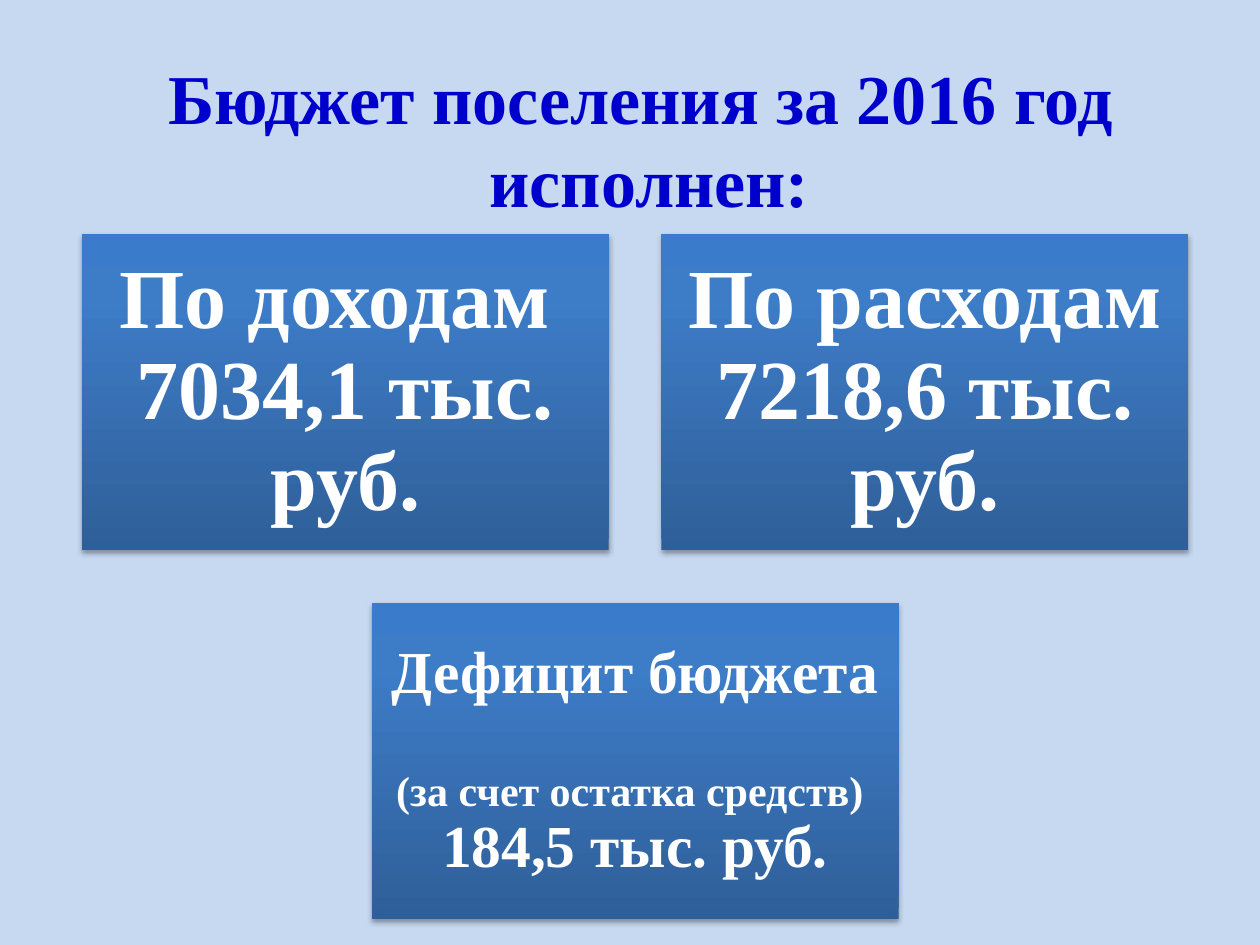
"""Build the slide on how the settlement budget was met in 2016."""
from copy import deepcopy
from typing import NamedTuple

from lxml.etree import fromstring
from pptx import Presentation
from pptx.dml.color import RGBColor
from pptx.enum.shapes import MSO_SHAPE
from pptx.enum.text import MSO_ANCHOR, PP_ALIGN
from pptx.oxml.ns import qn
from pptx.util import Pt

FONT = "Times New Roman"
WIDE, HIGH, GAP = 301.1, 180.7, 30.1
LEFT, TOP = 46.8, 133.8
STOPS = ((0, "2F5F99"), (0.8, "3D7CC7"), (1, "3A7CCB"))
SHADE = (
    '<a:effectLst xmlns:a="http://schemas.openxmlformats.org/drawingml/2006/main">'
    '<a:outerShdw blurRad="{}" dist="{}" dir="5400000" rotWithShape="0">'
    '<a:srgbClr val="{}"><a:alpha val="35000"/></a:srgbClr>'
    "</a:outerShdw></a:effectLst>"
)


class Piece(NamedTuple):
    text: str
    size: float
    ends: bool = False


class Card(NamedTuple):
    col: float
    row: int
    inset: float
    words: tuple[Piece, ...]


TITLE = (Piece("Бюджет поселения за 2016 год ", 40, True), Piece("исполнен:", 40))
CARDS = (
    Card(0, 0, 14.4, (Piece("По доходам ", 48, True), Piece("7034,1 тыс. руб.", 48))),
    Card(1, 0, 14.4, (Piece("По расходам 7218,6 тыс. руб.", 48),)),
    Card(0.5, 1, 10.2, (
        Piece("Дефицит бюджета ", 34, True),
        Piece("(за счет остатка средств) ", 24, True),
        Piece("184,5 тыс. руб.", 34),
    )),
)


def hue(code: str) -> RGBColor:
    return RGBColor.from_string(code)


def write(frame, words: tuple[Piece, ...], code: str) -> None:
    frame.word_wrap = True
    frame.vertical_anchor = MSO_ANCHOR.MIDDLE
    para = frame.paragraphs[0]
    para.alignment = PP_ALIGN.CENTER
    for piece in words:
        run = para.add_run()
        run.text = piece.text
        font = run.font
        font.name, font.size, font.bold = FONT, Pt(piece.size), True
        font.color.rgb = hue(code)
        if piece.ends:
            para.add_line_break()
            para._p[-1].append(deepcopy(run._r.rPr))


def shade(box) -> None:
    fill = box.fill
    fill.gradient()
    fill.gradient_angle = 90
    props = box._element.spPr
    stops = props.find(".//" + qn("a:gsLst"))
    stops.append(deepcopy(stops[-1]))
    for stop, (place, code) in zip(fill.gradient_stops, STOPS):
        stop.position = place
        stop.color.rgb = hue(code)
    box.line.fill.background()
    props.append(fromstring(SHADE.format(Pt(3.1), Pt(1.8), hue("000000"))))


def draw(slide, card: Card) -> None:
    left = LEFT + card.col * (WIDE + GAP)
    top = TOP + card.row * (HIGH + GAP)
    box = slide.shapes.add_shape(
        MSO_SHAPE.RECTANGLE, Pt(left), Pt(top), Pt(WIDE), Pt(HIGH))
    shade(box)
    frame = box.text_frame
    frame.margin_left = frame.margin_right = Pt(card.inset)
    frame.margin_top = frame.margin_bottom = Pt(card.inset)
    write(frame, card.words, "FFFFFF")
    frame.paragraphs[0].line_spacing = 0.9


def main() -> None:
    deck = Presentation()
    deck.slide_width, deck.slide_height = Pt(720), Pt(540)
    slide = deck.slides.add_slide(deck.slide_layouts[6])
    back = slide.background.fill
    back.solid()
    back.fore_color.rgb = hue("C6D9F1")
    title = slide.shapes.add_textbox(Pt(22.3), Pt(0), Pt(697.7), Pt(157.7))
    write(title.text_frame, TITLE, "0000CC")
    for card in CARDS:
        draw(slide, card)
    deck.save("out.pptx")


if __name__ == "__main__":
    main()
